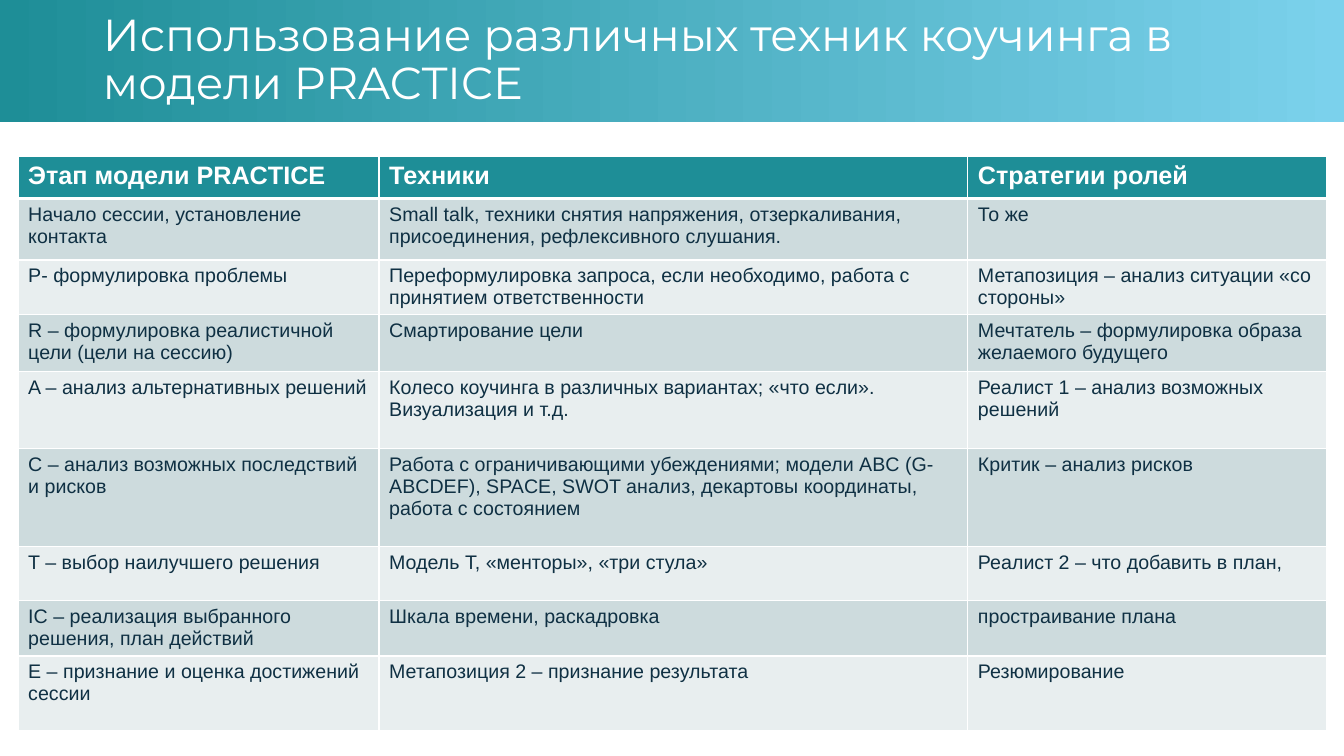
from pptx import Presentation
from pptx.dml.color import RGBColor
from pptx.enum.shapes import MSO_SHAPE as SHAPE
from pptx.enum.text import MSO_ANCHOR as ANCHOR, MSO_AUTO_SIZE as AUTO, PP_ALIGN as ALIGN
from pptx.oxml import parse_xml
from pptx.oxml.ns import nsdecls
from pptx.util import Inches, Pt

TEAL = RGBColor(0x1E, 0x8E, 0x97)
SKY = RGBColor(0x7B, 0xD1, 0xEC)
WHITE = RGBColor(0xFF, 0xFF, 0xFF)
NAVY = RGBColor(0x0F, 0x30, 0x43)
BANDS = [RGBColor(0xE8, 0xEE, 0xEF), RGBColor(0xCD, 0xDB, 0xDD)]

COL_WIDTHS = [3.58, 5.84, 3.56]
ROW_HEIGHTS = [0.42, 0.61, 0.54, 0.57, 0.76, 0.97, 0.54, 0.55, 0.74]
ROWS = [
    ("Этап модели PRACTICE", "Техники", "Стратегии ролей"),
    ("Начало сессии, установление контакта",
     "Small talk, техники снятия напряжения, отзеркаливания, присоединения, рефлексивного слушания.",
     "То же"),
    ("P- формулировка проблемы",
     "Переформулировка запроса, если необходимо, работа с принятием ответственности",
     "Метапозиция – анализ ситуации «со стороны»"),
    ("R – формулировка реалистичной цели (цели на сессию)",
     "Смартирование цели",
     "Мечтатель – формулировка образа желаемого будущего"),
    ("A – анализ альтернативных решений",
     "Колесо коучинга в различных вариантах; «что если». Визуализация и т.д.",
     "Реалист 1 – анализ возможных решений"),
    ("C – анализ возможных последствий и рисков",
     "Работа с ограничивающими убеждениями; модели ABC (G-ABCDEF), SPACE, SWOT анализ, "
     "декартовы координаты, работа с состоянием",
     "Критик – анализ рисков"),
    ("T – выбор наилучшего решения",
     "Модель Т, «менторы», «три стула»",
     "Реалист 2 – что добавить в план,"),
    ("IC – реализация выбранного решения, план действий",
     "Шкала времени, раскадровка",
     "простраивание плана"),
    ("E – признание и оценка достижений сессии",
     "Метапозиция 2 – признание результата",
     "Резюмирование"),
]


def set_font(p, name, size, color, bold=False):
    for r in p.runs:
        r.font.name, r.font.size, r.font.bold = name, Pt(size), bold
        r.font.color.rgb = color


def set_borders(cell, top, bottom):
    tc_pr = cell._tc.get_or_add_tcPr()
    for i, (side, width) in enumerate([("L", 1), ("R", 1), ("T", top), ("B", bottom)]):
        tc_pr.insert(i, parse_xml(
            f'<a:ln{side} {nsdecls("a")} w="{Pt(width)}"><a:solidFill>'
            f'<a:srgbClr val="{WHITE}"/></a:solidFill></a:ln{side}>'))


prs = Presentation()
prs.slide_width, prs.slide_height = Inches(13.33), Inches(7.5)
s = prs.slides.add_slide(prs.slide_layouts[5])

# Gradient banner behind the title
banner = s.shapes.add_shape(SHAPE.RECTANGLE, 0, 0, prs.slide_width, Inches(1.21))
banner.shadow.inherit = False
banner.line.fill.background()
banner.fill.gradient()
banner.fill.gradient_angle = 0
for stop, color, position in zip(banner.fill.gradient_stops, (TEAL, SKY), (0, 1)):
    stop.color.rgb = color
    stop.position = position
s.shapes._spTree.insert(2, banner._element)

# Title
title = s.shapes.title
title.left, title.top = Inches(0.92), Inches(0.07)
title.width, title.height = Inches(11.5), Inches(1.07)
tf = title.text_frame
tf.text = "Использование различных техник коучинга в модели PRACTICE"
tf.word_wrap = True
tf.auto_size = AUTO.NONE
tf.vertical_anchor = ANCHOR.MIDDLE
p = tf.paragraphs[0]
p.alignment = ALIGN.LEFT
p.line_spacing = 0.9
set_font(p, "Montserrat", 32, WHITE)

# Table of stages, techniques and strategies
table = s.shapes.add_table(len(ROWS), len(COL_WIDTHS), Inches(0.18), Inches(1.55),
                           Inches(sum(COL_WIDTHS)), Inches(sum(ROW_HEIGHTS))).table
for col, width in zip(table.columns, COL_WIDTHS):
    col.width = Inches(width)
for i, (row, height, texts) in enumerate(zip(table.rows, ROW_HEIGHTS, ROWS)):
    row.height = Inches(height)
    header = i == 0
    for cell, text in zip(row.cells, texts):
        cell.text_frame.text = text
        set_font(cell.text_frame.paragraphs[0], "Arial", 18 if header else 14,
                 WHITE if header else NAVY, header)
        cell.fill.solid()
        cell.fill.fore_color.rgb = TEAL if header else BANDS[i % 2]
        set_borders(cell, top=3 if i == 1 else 1, bottom=3 if header else 1)

prs.save("out.pptx")
